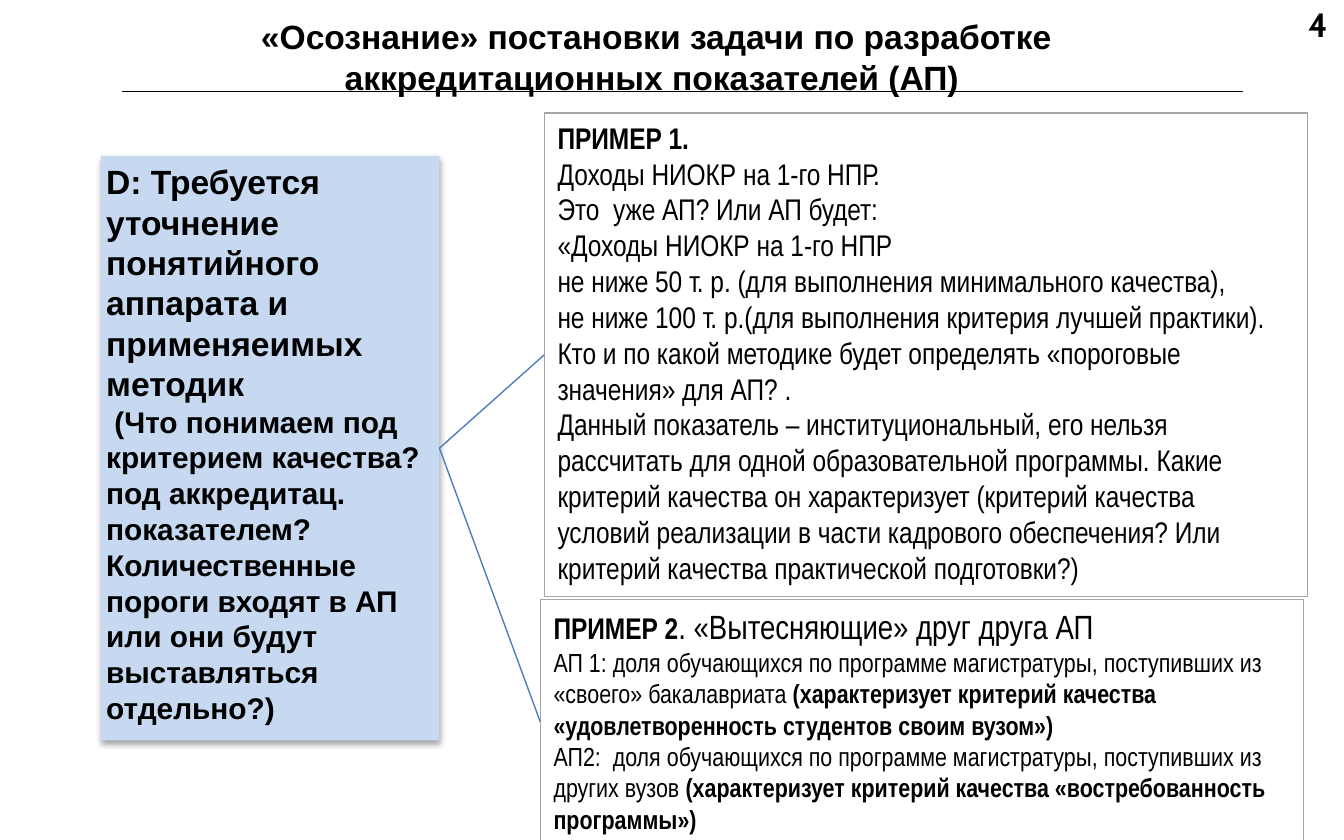
from lxml import etree
from pptx import Presentation
from pptx.dml.color import RGBColor
from pptx.enum.shapes import MSO_CONNECTOR, MSO_SHAPE
from pptx.enum.text import MSO_ANCHOR, MSO_AUTO_SIZE, PP_ALIGN
from pptx.oxml.ns import qn
from pptx.util import Inches, Pt

STRAIGHT = MSO_CONNECTOR.STRAIGHT
RECTANGLE = MSO_SHAPE.RECTANGLE
TOP, MIDDLE = MSO_ANCHOR.TOP, MSO_ANCHOR.MIDDLE
LEFT, CENTER = PP_ALIGN.LEFT, PP_ALIGN.CENTER
NO_AUTOFIT = MSO_AUTO_SIZE.NONE
TITLE_ONLY = 5

COLORS = {"text": "000000", "question": "C6D9F1", "border": "A6A6A6", "link": "4B7EBC"}

# Each paragraph is a list of (text, size, bold) runs.
TITLE = [[("«Осознание» постановки задачи по разработке аккредитационных показателей (АП) ", 18, True)]]
NUMBER = [[("4", 18, True)]]
QUESTION = [
    [("D: Требуется уточнение понятийного аппарата и применяеимых методик", 18, True)],
    [(" (Что понимаем под критерием качества? под аккредитац. показателем? "
      "Количественные пороги входят в АП или они будут выставляться отдельно?)", 16, True)],
]
EXAMPLE_1 = [[("ПРИМЕР 1.", 16, True)]] + [[(line, 16, False)] for line in (
    "Доходы НИОКР на 1-го НПР.",
    "Это  уже АП? Или АП будет:",
    "«Доходы НИОКР на 1-го НПР",
    "не ниже 50 т. р. (для выполнения минимального качества),",
    "не ниже 100 т. р.(для выполнения критерия лучшей практики).",
    "Кто и по какой методике будет определять «пороговые значения» для АП? .",
    "Данный показатель – институциональный, его нельзя рассчитать для одной "
    "образовательной программы. Какие критерий качества он характеризует (критерий "
    "качества условий реализации в части кадрового обеспечения? Или критерий качества "
    "практической подготовки?)",
)]
EXAMPLE_2 = [
    [("ПРИМЕР 2", 16, True), (". «Вытесняющие» друг друга АП", 18, False)],
    [("АП 1: доля обучающихся по программе магистратуры, поступивших из «своего» бакалавриата ", 14, False),
     ("(характеризует критерий качества «удовлетворенность студентов своим вузом»)", 14, True)],
    [("АП2:  доля обучающихся по программе магистратуры, поступивших из других вузов ", 14, False),
     ("(характеризует критерий качества «востребованность программы»)", 14, True)],
]
QUESTION_BOX = (0.75, 1.16, 2.52, 4.35)
EXAMPLES = [(EXAMPLE_1, (4.05, 0.84, 5.68, 3.6)), (EXAMPLE_2, (4.02, 4.46, 5.68, 1.82))]


def color(key):
    return RGBColor.from_string(COLORS[key])


def write(shape, paragraphs, typeface, align=LEFT, anchor=TOP, inset=None):
    frame = shape.text_frame
    frame.word_wrap = True
    frame.auto_size = NO_AUTOFIT
    frame.vertical_anchor = anchor
    if inset is not None:
        frame.margin_left = frame.margin_right = Inches(inset)
        frame.margin_top = frame.margin_bottom = Inches(inset)
    for index, runs in enumerate(paragraphs):
        paragraph = frame.add_paragraph() if index else frame.paragraphs[0]
        paragraph.alignment = align
        font = paragraph.font
        font.name, font.color.rgb = typeface, color("text")
        _, base_size, base_bold = runs[0]
        font.size, font.bold = Pt(base_size), base_bold
        for text, size, bold in runs:
            run = paragraph.add_run()
            run.text = text
            if size != base_size:
                run.font.size = Pt(size)
            if bold != base_bold:
                run.font.bold = bold


def add_box(slide, place, fill=None, border=None):
    box = slide.shapes.add_shape(RECTANGLE, *map(Inches, place))
    box.shadow.inherit = False
    if fill:
        box.fill.solid()
        box.fill.fore_color.rgb = color(fill)
    else:
        box.fill.background()
    if border:
        box.line.color.rgb = color(border)
        box.line.width = Pt(0.75)
    else:
        box.line.fill.background()
    return box


def add_shadow(box):
    effects = box.element.spPr.find(qn("a:effectLst"))
    shadow = etree.SubElement(effects, qn("a:outerShdw"), blurRad=str(Pt(3.1)),
                              dist=str(Pt(1.8)), dir="5400000", rotWithShape="0")
    tint = etree.SubElement(shadow, qn("a:srgbClr"), val=COLORS["text"])
    etree.SubElement(tint, qn("a:alpha"), val="35000")


def add_line(slide, start, end, key):
    line = slide.shapes.add_connector(STRAIGHT, *map(Inches, (*start, *end)))
    line.line.color.rgb = color(key)
    line.line.width = Pt(0.75)
    etree.SubElement(line.element.spPr, qn("a:effectLst"))


def main():
    """Build the slide on defining accreditation indicators."""
    deck = Presentation()
    deck.slide_width, deck.slide_height = Inches(10), Inches(6.25)
    slide = deck.slides.add_slide(deck.slide_layouts[TITLE_ONLY])

    number = slide.shapes.add_textbox(*map(Inches, (9.49, -0.02, 0.63, 0.33)))
    write(number, NUMBER, "Cabin", CENTER)
    add_line(slide, (9.25, 0.68), (0.91, 0.68), "text")

    title = slide.shapes.title
    title.left, title.top, title.width, title.height = map(Inches, (0.91, 0.19, 7.95, 0.46))
    write(title, TITLE, "Arial", CENTER, MIDDLE)

    question = add_box(slide, QUESTION_BOX, fill="question")
    add_shadow(question)
    write(question, QUESTION, "Arial", inset=0.04)

    left, top, width, height = QUESTION_BOX
    fork = (left + width, top + height / 2)
    for paragraphs, place in EXAMPLES:
        example = add_box(slide, place, border="border")
        write(example, paragraphs, "Arial Narrow")
        add_line(slide, fork, (place[0], place[1] + place[3] / 2), "link")

    deck.save("out.pptx")


if __name__ == "__main__":
    main()
